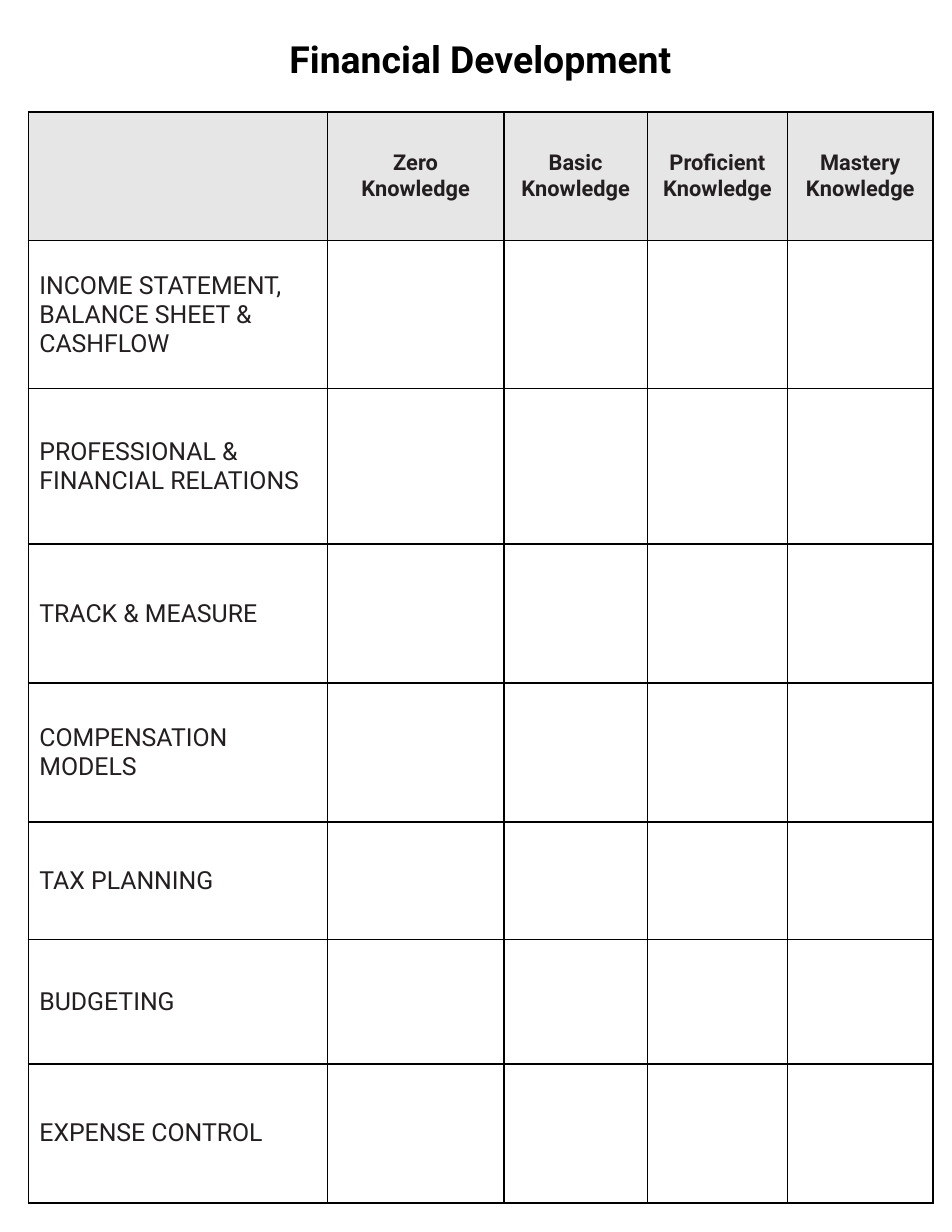
from dataclasses import dataclass

import pptx
import pptx.dml.color
import pptx.enum.text
import pptx.oxml
import pptx.oxml.ns
import pptx.util
from lxml import etree

Cm = pptx.util.Cm
Pt = pptx.util.Pt
ALIGN = pptx.enum.text.PP_ALIGN
qn = pptx.oxml.ns.qn


@dataclass(frozen=True)
class Level:
    label: str
    width: float


@dataclass(frozen=True)
class Skill:
    label: str
    height: float


SKILL_WIDTH = 6.78
HEADING_HEIGHT = 2.92
LEVELS = [
    Level("Zero Knowledge", 4.01),
    Level("Basic Knowledge", 3.25),
    Level("Proficient Knowledge", 3.18),
    Level("Mastery Knowledge", 3.3),
]
SKILLS = [
    Skill("INCOME STATEMENT, BALANCE SHEET & CASHFLOW", 3.35),
    Skill("PROFESSIONAL & FINANCIAL RELATIONS", 3.53),
    Skill("TRACK & MEASURE", 3.15),
    Skill("COMPENSATION MODELS", 3.15),
    Skill("TAX PLANNING", 2.67),
    Skill("BUDGETING", 2.82),
    Skill("EXPENSE CONTROL", 3.15),
]
TITLE_FONT = {"name": "Roboto", "size": Pt(24), "bold": True}
LEVEL_FONT = {"name": "Roboto", "size": Pt(14), "bold": True}
SKILL_FONT = {"name": "Roboto", "size": Pt(16), "bold": False}


def color(value: str) -> pptx.dml.color.RGBColor:
    return pptx.dml.color.RGBColor.from_string(value)


def write(frame, text: str, font: dict, ink: str, align) -> None:
    paragraph = frame.paragraphs[0]
    paragraph.alignment = align
    run = paragraph.add_run()
    run.text = text
    for attribute, value in font.items():
        setattr(run.font, attribute, value)
    run.font.color.rgb = color(ink)


def outline(cell) -> None:
    properties = cell._tc.get_or_add_tcPr()
    for side in ("a:lnL", "a:lnR", "a:lnT", "a:lnB"):
        line = etree.SubElement(properties, qn(side), w=str(Pt(1)))
        fill = etree.SubElement(line, qn("a:solidFill"))
        etree.SubElement(fill, qn("a:srgbClr"), val="000000")


def shade(cell) -> None:
    cell.fill.solid()
    cell.fill.fore_color.rgb = color("D0CECE")
    tint = cell._tc.tcPr.find(qn("a:solidFill")).find(qn("a:srgbClr"))
    etree.SubElement(tint, qn("a:alpha"), val="50000")


def draw_title(slide) -> None:
    title = slide.shapes.add_textbox(Cm(5.28), Cm(0.69), Cm(11.23), Cm(1.27))
    title.text_frame.word_wrap = True
    title.text_frame.auto_size = pptx.enum.text.MSO_AUTO_SIZE.SHAPE_TO_FIT_TEXT
    write(title.text_frame, "Financial Development", TITLE_FONT, "000000", ALIGN.CENTER)


def draw_assessment(slide) -> None:
    widths = [SKILL_WIDTH] + [level.width for level in LEVELS]
    heights = [HEADING_HEIGHT] + [skill.height for skill in SKILLS]
    assessment = slide.shapes.add_table(
        len(heights), len(widths), Cm(0.64), Cm(2.54), Cm(sum(widths)), Cm(sum(heights))
    ).table
    assessment.first_row = False
    assessment.horz_banding = False
    for column, width in zip(assessment.columns, widths):
        column.width = Cm(width)
    for row, height in zip(assessment.rows, heights):
        row.height = Cm(height)
    for cell in assessment.iter_cells():
        outline(cell)
        cell.fill.background()
        cell.vertical_anchor = pptx.enum.text.MSO_ANCHOR.MIDDLE
    for cell in assessment.rows[0].cells:
        shade(cell)
    for index, level in enumerate(LEVELS, 1):
        heading = assessment.cell(0, index).text_frame
        write(heading, level.label, LEVEL_FONT, "231F20", ALIGN.CENTER)
    for index, skill in enumerate(SKILLS, 1):
        entry = assessment.cell(index, 0).text_frame
        write(entry, skill.label, SKILL_FONT, "231F20", ALIGN.LEFT)


def main() -> None:
    deck = pptx.Presentation()
    deck.slide_width = Cm(21.59)
    deck.slide_height = Cm(27.94)
    slide = deck.slides.add_slide(deck.slide_layouts[6])
    draw_title(slide)
    draw_assessment(slide)
    deck.save("out.pptx")


if __name__ == "__main__":
    main()
